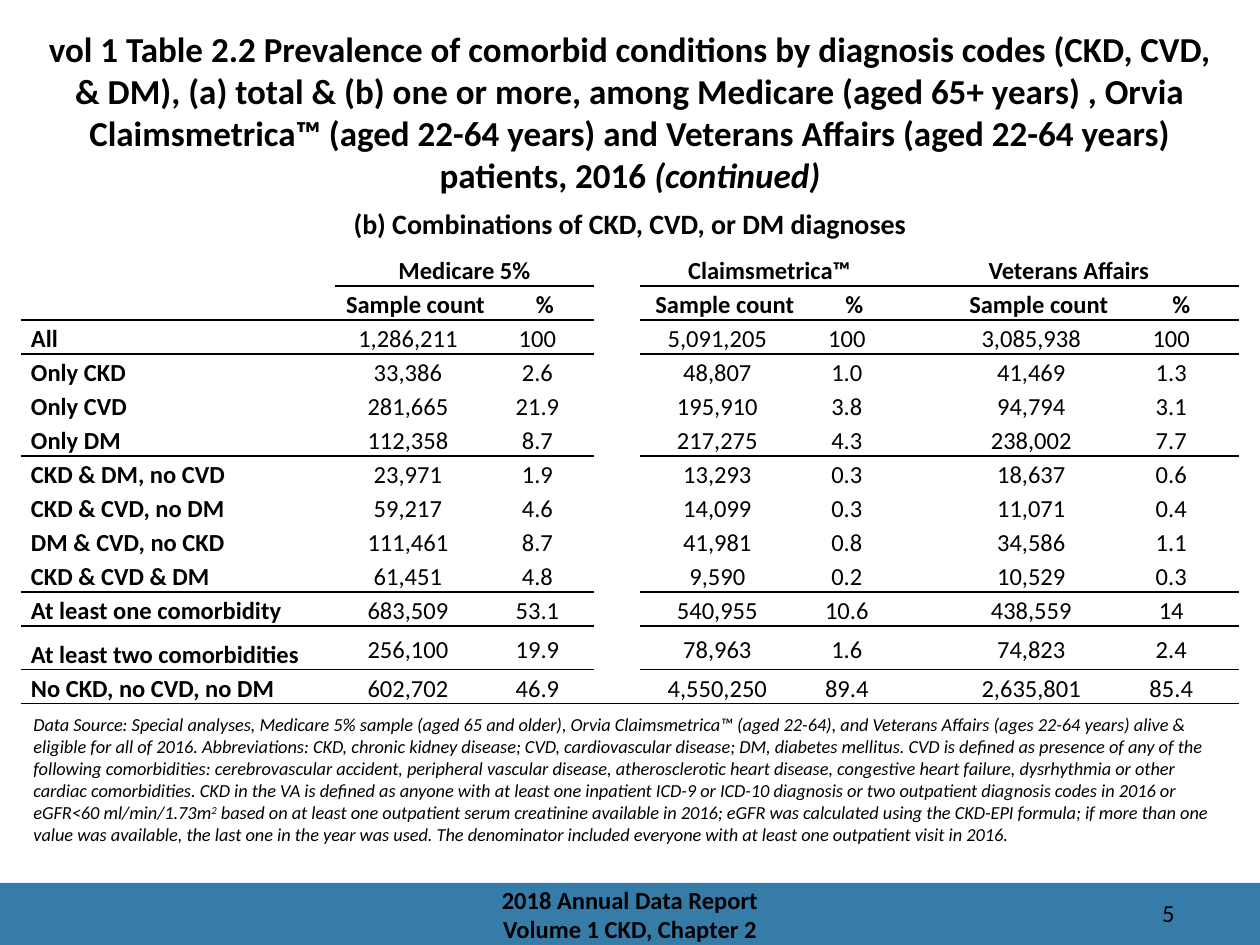
"""Build the comorbidity prevalence table slide."""
from lxml.etree import SubElement
from pptx import Presentation
from pptx.dml.color import RGBColor
from pptx.enum.shapes import MSO_SHAPE as Shape
from pptx.enum.text import MSO_ANCHOR as Anchor, PP_ALIGN as Align
from pptx.oxml.ns import qn
from pptx.util import Pt

PX = 914400 / 126
FONT = "Calibri"
COLORS = {"text": "000000", "rule": "000000", "band": "367CA8"}

TITLE = [
    ("vol 1 Table 2.2 Prevalence of comorbid conditions by diagnosis codes (CKD, CVD, & DM), "
     "(a) total & (b) one or more, among Medicare (aged 65+ years) , Orvia Claimsmetrica™ "
     "(aged 22-64 years) and Veterans Affairs (aged 22-64 years) patients, 2016 ", {}),
    ("(continued)", {"italic": True}),
]
SUBTITLE = [("(b) Combinations of CKD, CVD, or DM diagnoses", {})]
SOURCE_NOTE = [
    ("Data Source: Special analyses, Medicare 5% sample (aged 65 and older), Orvia Claimsmetrica™ "
     "(aged 22-64), and Veterans Affairs (ages 22-64 years) alive & eligible for all of 2016. "
     "Abbreviations: CKD, chronic kidney disease; CVD, cardiovascular disease; DM, diabetes "
     "mellitus. CVD is defined as presence of any of the following comorbidities: cerebrovascular "
     "accident, peripheral vascular disease, atherosclerotic heart disease, congestive heart "
     "failure, dysrhythmia or other cardiac comorbidities. CKD in the VA is defined as anyone with "
     "at least one inpatient ICD-9 or ICD-10 diagnosis or two outpatient diagnosis codes in 2016 "
     "or eGFR<60 ml/min/1.73m", {}),
    ("2", {"baseline": "30000"}),
    (" based on at least one outpatient serum creatinine available in 2016; eGFR was calculated "
     "using the CKD-EPI formula; if more than one value was available, the last one in the year "
     "was used. The denominator included everyone with at least one outpatient visit in 2016.", {}),
]
FOOTER = [[("2018 Annual Data Report", {})], [("Volume 1 CKD, Chapter 2", {})]]

GROUPS = [("Medicare 5%", 1, 2), ("Claimsmetrica™", 4, 5), ("Veterans Affairs", 6, 8)]
MEASURES = ("Sample count", "%")
ROWS = [
    ("All", "1,286,211", "100", "5,091,205", "100", "3,085,938", "100"),
    ("Only CKD", "33,386", "2.6", "48,807", "1.0", "41,469", "1.3"),
    ("Only CVD", "281,665", "21.9", "195,910", "3.8", "94,794", "3.1"),
    ("Only DM", "112,358", "8.7", "217,275", "4.3", "238,002", "7.7"),
    ("CKD & DM, no CVD", "23,971", "1.9", "13,293", "0.3", "18,637", "0.6"),
    ("CKD & CVD, no DM", "59,217", "4.6", "14,099", "0.3", "11,071", "0.4"),
    ("DM & CVD, no CKD", "111,461", "8.7", "41,981", "0.8", "34,586", "1.1"),
    ("CKD & CVD & DM", "61,451", "4.8", "9,590", "0.2", "10,529", "0.3"),
    ("At least one comorbidity", "683,509", "53.1", "540,955", "10.6", "438,559", "14"),
    ("At least two comorbidities", "256,100", "19.9", "78,963", "1.6", "74,823", "2.4"),
    ("No CKD, no CVD, no DM", "602,702", "46.9", "4,550,250", "89.4", "2,635,801", "85.4"),
]
COLUMN_WIDTHS = [314, 161, 98, 46, 170, 89, 55, 170, 115]
DATA_COLUMNS = [0, 1, 2, 4, 5, 7, 8]
GAP_COLUMN = 3
HEADER_ROWS = 2
ROW_HEIGHT, TALL_ROW_HEIGHT = 34, 44
TALL_ROW = 11
RULED_ROWS = {0, 1, 2, 5, 9, 10, 11, 12}
LAST_ROW = HEADER_ROWS + len(ROWS) - 1


def px(length):
    return round(length * PX)


def style_font(font, size, bold=False, italic=False):
    font.name, font.size, font.bold, font.italic = FONT, Pt(size), bold, italic
    font.color.rgb = RGBColor.from_string(COLORS["text"])


def add_text(page, area, lines, size, align, anchor=Anchor.TOP, bold=False, italic=False):
    box = page.shapes.add_textbox(*map(px, area))
    frame = box.text_frame
    frame.word_wrap = True
    frame.vertical_anchor = anchor
    for index, line in enumerate(lines):
        para = frame.add_paragraph() if index else frame.paragraphs[0]
        para.alignment = align
        for text, extra in line:
            span = para.add_run()
            span.text = text
            style_font(span.font, size, bold, extra.get("italic", italic))
            if "baseline" in extra:
                span.font._element.set("baseline", extra["baseline"])


def add_rule(cell):
    line = SubElement(cell._tc.get_or_add_tcPr(), qn("a:lnB"), w=str(Pt(1)))
    fill = SubElement(line, qn("a:solidFill"))
    SubElement(fill, qn("a:srgbClr"), val=COLORS["rule"])


def is_ruled(row, column):
    if column == GAP_COLUMN:
        return row == LAST_ROW
    return row in RULED_ROWS and (row, column) != (0, 0)


def table_texts():
    texts = {(0, first): name for name, first, _ in GROUPS}
    for index, column in enumerate(DATA_COLUMNS[1:]):
        texts[1, column] = MEASURES[index % 2]
    for row, values in enumerate(ROWS, HEADER_ROWS):
        texts.update({(row, column): value for column, value in zip(DATA_COLUMNS, values)})
    return texts


def style_cell(cell, row, column, text):
    is_label = column == 0
    is_value = row >= HEADER_ROWS and not is_label
    cell.margin_top = cell.margin_bottom = 0
    cell.margin_left = px(10)
    cell.margin_right = px((30 if column == 8 else 25) if is_value else 10)
    cell.vertical_anchor = Anchor.BOTTOM if is_label and row in (10, 11) else Anchor.MIDDLE
    if is_ruled(row, column):
        add_rule(cell)
    cell.fill.background()
    para = cell.text_frame.paragraphs[0]
    para.alignment = Align.LEFT if is_label else Align.CENTER
    para.line_spacing = 1.15
    if text:
        para.text = text
        style_font(para.runs[0].font, 14, bold=not is_value)
    else:
        SubElement(para._p, qn("a:endParaRPr"), sz="1400")


def add_prevalence_table(page):
    heights = [TALL_ROW_HEIGHT if row == TALL_ROW else ROW_HEIGHT for row in range(LAST_ROW + 1)]
    area = (21, 252, sum(COLUMN_WIDTHS), sum(heights))
    table = page.shapes.add_table(len(heights), len(COLUMN_WIDTHS), *map(px, area)).table
    table.first_row = table.horz_banding = False
    table._tbl.tblPr.find(qn("a:tableStyleId")).text = "{2D5ABB26-0587-4C30-8999-92F81FD0307C}"
    for column, width in zip(table.columns, COLUMN_WIDTHS):
        column.width = px(width)
    texts = table_texts()
    for row, height in enumerate(heights):
        table.rows[row].height = px(height)
        for column in range(len(COLUMN_WIDTHS)):
            style_cell(table.cell(row, column), row, column, texts.get((row, column)))
    for _, first, last in GROUPS:
        table.cell(0, first).merge(table.cell(0, last))


def main():
    deck = Presentation()
    deck.slide_width, deck.slide_height = px(1260), px(945)
    page = deck.slides.add_slide(deck.slide_layouts[6])
    band = page.shapes.add_shape(Shape.RECTANGLE, *map(px, (0, 883, 1260, 62)))
    band.shadow.inherit = False
    band.fill.solid()
    band.fill.fore_color.rgb = RGBColor.from_string(COLORS["band"])
    band.line.fill.background()
    add_text(page, (1061, 892, 126, 38), [[("5", {})]], 14, Align.RIGHT)
    add_text(page, (21, 21, 1218, 158), [TITLE], 20, Align.CENTER, bold=True)
    add_prevalence_table(page)
    add_text(page, (291, 200, 678, 47), [SUBTITLE], 16, Align.CENTER, bold=True)
    add_text(page, (21, 707, 1218, 146), [SOURCE_NOTE], 10.5, Align.LEFT, italic=True)
    add_text(page, (417, 883, 426, 62), FOOTER, 14, Align.CENTER, Anchor.MIDDLE, bold=True)
    deck.save("out.pptx")


if __name__ == "__main__":
    main()
